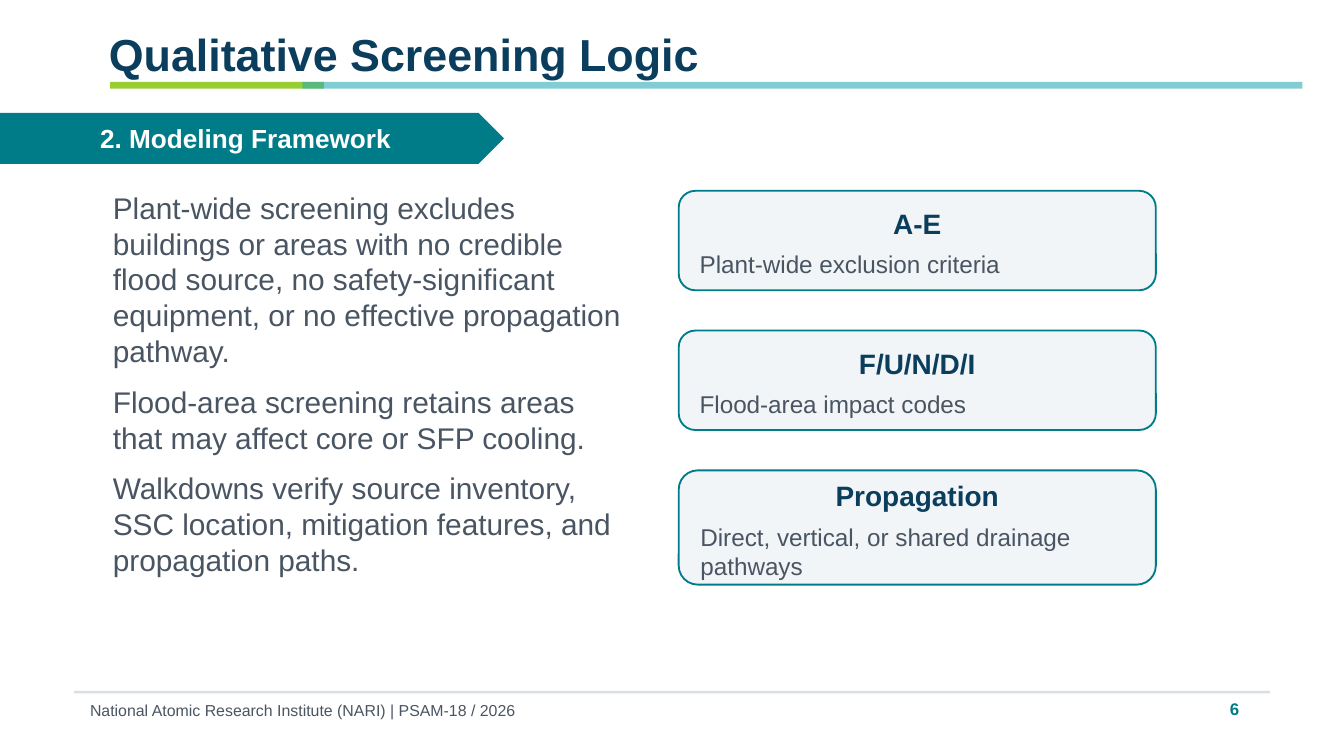
from lxml import etree
from pptx import Presentation
from pptx.dml.color import RGBColor
from pptx.enum.shapes import MSO_SHAPE
from pptx.enum.text import MSO_ANCHOR, MSO_AUTO_SIZE, PP_ALIGN
from pptx.oxml.ns import qn
from pptx.util import Inches, Pt

RECTANGLE, PENTAGON = MSO_SHAPE.RECTANGLE, MSO_SHAPE.PENTAGON
ROUNDED = MSO_SHAPE.ROUNDED_RECTANGLE
TOP, MIDDLE = MSO_ANCHOR.TOP, MSO_ANCHOR.MIDDLE
LEFT, CENTER, RIGHT = PP_ALIGN.LEFT, PP_ALIGN.CENTER, PP_ALIGN.RIGHT
FIXED, GROW = MSO_AUTO_SIZE.NONE, MSO_AUTO_SIZE.SHAPE_TO_FIT_TEXT

# Content
TITLE = "Qualitative Screening Logic"
SECTION = "2. Modeling Framework"
BODY = [
    "Plant-wide screening excludes buildings or areas with no credible flood source, "
    "no safety-significant equipment, or no effective propagation pathway.",
    "Flood-area screening retains areas that may affect core or SFP cooling.",
    "Walkdowns verify source inventory, SSC location, mitigation features, "
    "and propagation paths.",
]
CARDS = [  # heading, description, height
    ("A-E", "Plant-wide exclusion criteria", 0.74),
    ("F/U/N/D/I", "Flood-area impact codes", 0.74),
    ("Propagation", "Direct, vertical, or shared drainage pathways", 0.85),
]
FOOTER = "National Atomic Research Institute (NARI) | PSAM-18 / 2026"
PAGE = "6"

# Style
FONT = "Arial"
NAVY, TEAL, GRAY, WHITE = "0B3D5C", "007C89", "4A5563", "FFFFFF"
CARD_FILL, RULE = "F2F5F7", "D8DFE5"
TIGHT = (0.05, 0.02, 0.05, 0.02)
SLIDE_WIDTH = 10
CARD_LEFT, CARD_TOP, CARD_WIDTH, CARD_STEP = 5.05, 1.42, 3.55, 1.04


def color(value):
    return RGBColor.from_string(value)


def place(shape, box):
    shape.left, shape.top, shape.width, shape.height = map(Inches, box)


def set_frame(shape, margins, anchor=TOP, auto_size=GROW):
    frame = shape.text_frame
    frame.word_wrap = True
    frame.auto_size = auto_size
    frame.vertical_anchor = anchor
    (frame.margin_left, frame.margin_top,
     frame.margin_right, frame.margin_bottom) = map(Inches, margins)
    return frame


def format_paragraph(paragraph, size, text_color, bold=False, align=LEFT):
    paragraph.alignment = align
    for run in paragraph.runs:
        run.font.name, run.font.size, run.font.bold = FONT, Pt(size), bold
        run.font.color.rgb = color(text_color)


def add_filled(kind, box, fill, line=None, opacity=None):
    shape = slide.shapes.add_shape(kind, *map(Inches, box))
    shape.shadow.inherit = False
    shape.fill.solid()
    shape.fill.fore_color.rgb = color(fill)
    if opacity:
        fill_color = shape.fill._xPr.find(qn("a:solidFill"))[0]
        etree.SubElement(fill_color, qn("a:alpha"), val=str(opacity * 1000))
    if line:
        shape.line.color.rgb = color(line)
        shape.line.width = Pt(1)
    else:
        shape.line.fill.background()
    return shape


def add_label(text, box, size, text_color, bold=False, align=LEFT):
    label = slide.shapes.add_textbox(*map(Inches, box))
    frame = set_frame(label, TIGHT)
    frame.text = text
    format_paragraph(frame.paragraphs[0], size, text_color, bold, align)


# Widescreen slide, 16:9
presentation = Presentation()
presentation.slide_width = Inches(SLIDE_WIDTH)
presentation.slide_height = Inches(SLIDE_WIDTH * 9 / 16)
slide = presentation.slides.add_slide(presentation.slide_layouts[1])

# Title and its two-tone underline
title = slide.shapes.title
place(title, (0.76, 0.18, 8.45, 0.38))
title_frame = set_frame(title, TIGHT)
title_frame.text = TITLE
format_paragraph(title_frame.paragraphs[0], 24, NAVY, True)
add_filled(RECTANGLE, (0.82, 0.61, 1.59, 0.05), "80C201", opacity=80)
add_filled(RECTANGLE, (2.25, 0.61, 7.44, 0.05), "2DADB6", opacity=60)

# Section banner
banner = add_filled(PENTAGON, (0, 0.84, 3.75, 0.38), TEAL)
banner_frame = set_frame(banner, (0.1, 0.05, 0.1, 0.05), MIDDLE, FIXED)
banner_frame.text = SECTION
format_paragraph(banner_frame.paragraphs[0], 14, WHITE, True, CENTER)

# Body text, without bullets
body = slide.placeholders[1]
place(body, (0.76, 1.38, 3.95, 2.98))
body_frame = set_frame(body, (0.08, 0.03, 0.05, 0.03))
body_frame.text = "\n".join(BODY)
for paragraph in body_frame.paragraphs:
    paragraph.space_before, paragraph.space_after = Pt(0), Pt(8)
    properties = paragraph._p.get_or_add_pPr()
    properties.set("marL", "0")
    properties.set("indent", "0")
    etree.SubElement(properties, qn("a:buNone"))
    format_paragraph(paragraph, 16, GRAY)

# Screening cards
for index, (heading, description, height) in enumerate(CARDS):
    card = add_filled(ROUNDED, (CARD_LEFT, CARD_TOP + index * CARD_STEP, CARD_WIDTH, height),
                      CARD_FILL, TEAL)
    card_frame = set_frame(card, (0.12, 0.08, 0.12, 0.05), MIDDLE, FIXED)
    card_frame.text = f"{heading}\n{description}"
    first, second = card_frame.paragraphs
    format_paragraph(first, 15, NAVY, True, CENTER)
    format_paragraph(second, 13, GRAY)
    second.space_before = Pt(5)

# Footer
add_filled(RECTANGLE, (0.55, 5.14, 8.9, 0.02), RULE)
add_label(FOOTER, (0.62, 5.19, 6.6, 0.18), 8.5, GRAY)
add_label(PAGE, (8.85, 5.18, 0.42, 0.22), 9, TEAL, True, RIGHT)

presentation.save("out.pptx")
